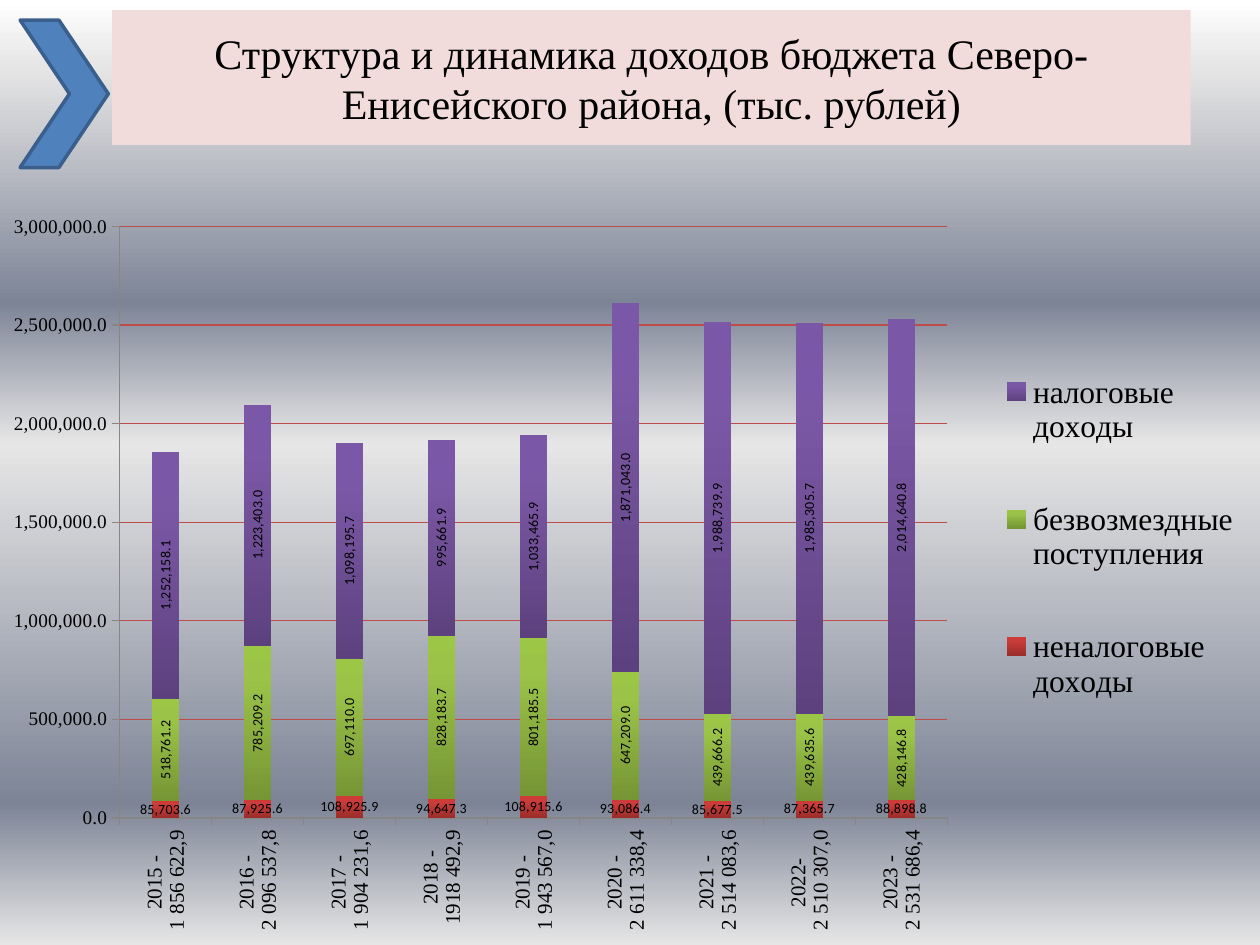
from lxml import etree
from pptx import Presentation
from pptx.chart.data import CategoryChartData
from pptx.dml.color import RGBColor
from pptx.enum.chart import XL_CHART_TYPE as ChartType, XL_LEGEND_POSITION as LegendPos, XL_TICK_MARK as Tick
from pptx.enum.shapes import MSO_SHAPE as Shape
from pptx.enum.text import MSO_ANCHOR as Anchor, PP_ALIGN as Align
from pptx.oxml.ns import qn
from pptx.util import Inches, Pt

SERIF = "Times New Roman"
SANS = "Calibri"
NUMBER = "#,##0.0"
COLORS = {"text": "000000", "banner": "F2DCDB", "chevron": "4F81BD",
          "chevron_line": "3A5F8C", "grid": "BF4C48", "axis": "868686"}
BACKGROUND = [(0, "FFFFFF"), (7, "E6E6E6"), (32, "7D8496"),
              (47, "E6E6E6"), (85, "7D8496"), (100, "E6E6E6")]
CATEGORIES = ["2015 - \n1 856 622,9", "2016 - \n2 096 537,8", "2017 - \n1 904 231,6",
              "2018 -\n1918 492,9", "2019 - \n1 943 567,0", "2020 - \n2 611 338,4",
              "2021 - \n2 514 083,6", "2022- \n2 510 307,0", "2023 - \n2 531 686,4"]
SERIES = [
    {"name": "неналоговые доходы", "shades": ("CE3B37", "CB3D3A", "9B2D2A"), "turn": 0,
     "values": [85703.6, 87925.6, 108925.9, 94647.3, 108915.6,
                93086.4, 85677.5, 87365.7, 88898.8]},
    {"name": "безвозмездные поступления", "shades": ("9CC746", "9BC348", "769535"), "turn": -90,
     "values": [518761.2, 785209.2, 697110.0, 828183.7, 801185.5,
                647209.0, 439666.2, 439635.6, 428146.8]},
    {"name": "налоговые доходы", "shades": ("7B57A8", "7B58A6", "5D417E"), "turn": -90,
     "values": [1252158.1, 1223403.0, 1098195.7, 995661.9, 1033465.9,
                1871043.0, 1988739.9, 1985305.7, 2014640.8]},
]


def rgb(name):
    """Return the named palette colour."""
    return RGBColor.from_string(COLORS[name])


def apply(target, formats):
    """Set every attribute in a dict of format values."""
    for name, value in formats.items():
        setattr(target, name, value)


def style_font(font, size, face):
    """Give a font its size, face and the text colour."""
    apply(font, {"size": Pt(size), "name": face, "bold": False})
    font.color.rgb = rgb("text")


def set_gradient(fill, root, stops):
    """Fill with a gradient that runs from top to bottom."""
    fill.gradient()
    fill.gradient_angle = 270
    stop_list = root.find(".//" + qn("a:gsLst"))
    for stop in list(stop_list):
        stop_list.remove(stop)
    for percent, color in stops:
        stop = etree.SubElement(stop_list, qn("a:gs"), pos=str(percent * 1000))
        etree.SubElement(stop, qn("a:srgbClr"), val=color)


def set_layout(element, index, box, inner=False):
    """Place a chart part by fractions of the chart's size."""
    for old in element.findall(qn("c:layout")):
        element.remove(old)
    layout = etree.Element(qn("c:layout"))
    manual = etree.SubElement(layout, qn("c:manualLayout"))
    values = [("layoutTarget", "inner")] if inner else []
    values += [("xMode", "edge"), ("yMode", "edge"), *zip("xywh", box)]
    for tag, value in values:
        etree.SubElement(manual, qn("c:" + tag), val=str(value))
    element.insert(index, layout)


def turn_text(element, degrees):
    """Rotate the text of an axis or of data labels."""
    body = element.find(qn("c:txPr")).find(qn("a:bodyPr"))
    body.set("rot", str(degrees * 60000))
    body.set("vert", "horz")


def add_title(s, text):
    """Place and format the title banner."""
    title = s.shapes.title
    apply(title, {"left": Inches(0.89), "top": Inches(0.08),
                  "width": Inches(8.56), "height": Inches(1.07)})
    title.fill.solid()
    title.fill.fore_color.rgb = rgb("banner")
    tf = title.text_frame
    apply(tf, {"word_wrap": True, "vertical_anchor": Anchor.MIDDLE})
    p = tf.paragraphs[0]
    p.alignment = Align.CENTER
    r = p.add_run()
    r.text = text
    style_font(r.font, 24, SERIF)


def add_chevron(s):
    """Add the chevron beside the title."""
    sp = s.shapes.add_shape(Shape.CHEVRON, Inches(0.16), Inches(0.16), Inches(0.7), Inches(1.17))
    sp.adjustments[0] = 0.56
    sp.shadow.inherit = False
    sp.fill.solid()
    sp.fill.fore_color.rgb = rgb("chevron")
    sp.line.color.rgb = rgb("chevron_line")
    sp.line.width = Pt(2)


def format_axis(axis, size):
    """Format the labels, ticks and line of an axis."""
    style_font(axis.tick_labels.font, size, SERIF)
    apply(axis, {"major_tick_mark": Tick.OUTSIDE, "minor_tick_mark": Tick.NONE})
    axis.format.line.color.rgb = rgb("axis")
    axis.format.line.width = Pt(0.75)


def format_series(series, info):
    """Colour a series and label its values."""
    set_gradient(series.format.fill, series._element, zip((0, 20, 100), info["shades"]))
    series.invert_if_negative = False
    labels = series.data_labels
    apply(labels, {"show_value": True, "number_format": NUMBER, "number_format_is_linked": False})
    style_font(labels.font, 8, SANS)
    turn_text(labels._element, info["turn"])


def add_income_chart(s):
    """Add the stacked column chart of budget income."""
    data = CategoryChartData(number_format=NUMBER)
    data.categories = CATEGORIES
    for info in SERIES:
        data.add_series(info["name"], info["values"])
    chart = s.shapes.add_chart(ChartType.COLUMN_STACKED, Inches(-0.01), Inches(1.7),
                               Inches(10), Inches(5.83), data).chart
    apply(chart, {"has_title": False, "has_legend": True})
    style_font(chart.font, 18, SANS)
    apply(chart.legend, {"position": LegendPos.RIGHT, "include_in_layout": False})
    style_font(chart.legend.font, 18, SERIF)
    set_layout(chart.legend._element, 1, (0.79, 0.14, 0.2, 0.6))
    set_layout(chart._chartSpace.chart.plotArea, 0, (0.096, 0.017, 0.657, 0.805), inner=True)
    apply(chart.plots[0], {"gap_width": 233, "overlap": 100, "vary_by_categories": False})
    for series, info in zip(chart.plots[0].series, SERIES):
        format_series(series, info)
    format_axis(chart.category_axis, 12)
    turn_text(chart.category_axis._element, -90)
    axis = chart.value_axis
    format_axis(axis, 11)
    apply(axis, {"minimum_scale": 0, "maximum_scale": 3000000, "major_unit": 500000,
                 "has_major_gridlines": True})
    apply(axis.tick_labels, {"number_format": NUMBER, "number_format_is_linked": False})
    axis.major_gridlines.format.line.color.rgb = rgb("grid")
    axis.major_gridlines.format.line.width = Pt(0.75)


def main():
    """Build and save the slide."""
    prs = Presentation()
    apply(prs, {"slide_width": Inches(10), "slide_height": Inches(7.5)})
    s = prs.slides.add_slide(prs.slide_layouts[5])
    set_gradient(s.background.fill, s._element, BACKGROUND)
    add_title(s, "Структура и динамика доходов бюджета Северо-Енисейского района, (тыс. рублей)")
    add_income_chart(s)
    add_chevron(s)
    prs.save("out.pptx")


if __name__ == "__main__":
    main()
